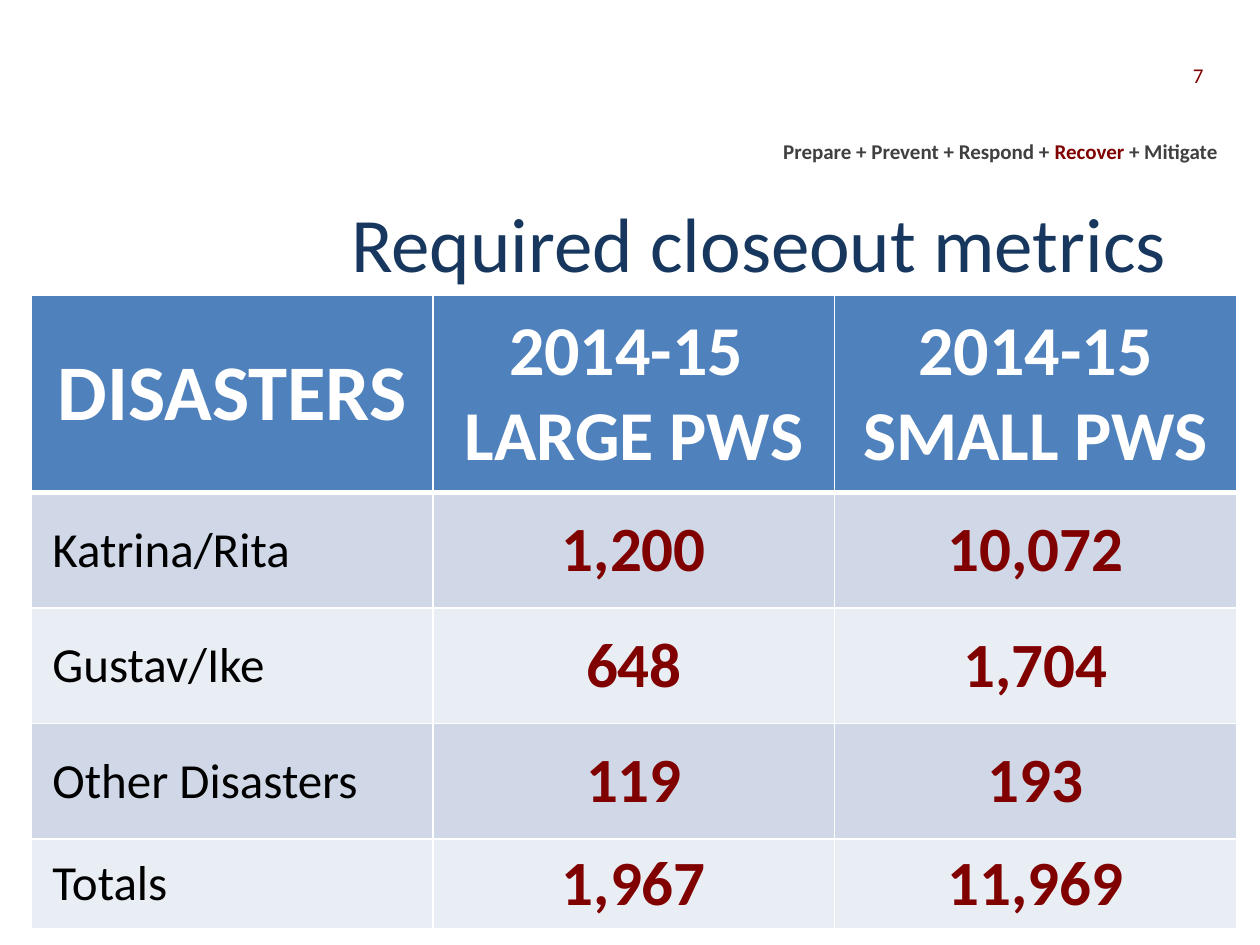
from dataclasses import dataclass

from lxml import etree
from pptx import Presentation
from pptx.dml.color import RGBColor
from pptx.enum import text
from pptx.oxml import ns
from pptx.util import Pt


@dataclass(frozen=True)
class Theme:
    """Colours and type sizes of the slide."""
    font: str = "Calibri"
    navy: str = "17375E"
    maroon: str = "800000"
    grey: str = "404040"
    black: str = "000000"
    white: str = "FFFFFF"
    header: str = "4F81BD"
    bands: tuple = ("D0D8E8", "E9EDF4")
    small: int = 12
    title: int = 44
    corner: int = 45
    heading: int = 40
    label: int = 28
    value: int = 36


T = Theme()
LEFT, CENTER, RIGHT = (text.PP_ALIGN.LEFT, text.PP_ALIGN.CENTER,
                       text.PP_ALIGN.RIGHT)
HEADINGS = ["DISASTERS", "2014-15 \nLARGE PWS", "2014-15\nSMALL PWS"]
RESULTS = [
    ["Katrina/Rita", "1,200", "10,072"],
    ["Gustav/Ike", "648", "1,704"],
    ["Other Disasters", "119", "193"],
    ["Totals", "1,967", "11,969"],
]
ROW_HEIGHTS = [113, 66, 66, 66, 51]


def add_text(p, content, *, size, color, bold=False, align=LEFT):
    """Append formatted text to a paragraph, breaking lines at newlines."""
    p.alignment = align
    for i, line in enumerate(content.split("\n")):
        if i:
            p.add_line_break()
        r = p.add_run()
        r.text = line
        r.font.name = T.font
        r.font.size = Pt(size)
        r.font.bold = bold
        r.font.color.rgb = RGBColor.from_string(color)


def add_box(s, x, y, w, h, anchor=text.MSO_ANCHOR.MIDDLE):
    """Add a wrapping text box and return its first paragraph."""
    tf = s.shapes.add_textbox(Pt(x), Pt(y), Pt(w), Pt(h)).text_frame
    tf.word_wrap = True
    tf.vertical_anchor = anchor
    return tf.paragraphs[0]


def set_borders(cell, widths):
    """Draw white cell borders from a side-to-width mapping."""
    tc_pr = cell._tc.get_or_add_tcPr()
    for i, (side, width) in enumerate(widths.items()):
        ln = etree.Element(ns.qn(f"a:ln{side}"), w=str(Pt(width)))
        fill = etree.SubElement(ln, ns.qn("a:solidFill"))
        etree.SubElement(fill, ns.qn("a:srgbClr"), val=T.white)
        tc_pr.insert(i, ln)


def fill_cell(cell, content, fill, top=1, bottom=1, **fmt):
    """Write and style one table cell."""
    cell.margin_left = cell.margin_right = Pt(12)
    cell.margin_top = cell.margin_bottom = Pt(3.6)
    cell.vertical_anchor = text.MSO_ANCHOR.MIDDLE
    cell.fill.solid()
    cell.fill.fore_color.rgb = RGBColor.from_string(fill)
    set_borders(cell, {"L": 1, "R": 1, "T": top, "B": bottom})
    add_text(cell.text_frame.paragraphs[0], content, **fmt)


def add_metrics(s):
    """Add the table of closeout metrics."""
    table = s.shapes.add_table(len(ROW_HEIGHTS), len(HEADINGS), Pt(18),
                               Pt(168.5), Pt(688.5),
                               Pt(sum(ROW_HEIGHTS))).table
    table.first_row = table.horz_banding = False
    for col in table.columns:
        col.width = Pt(229.5)
    for row, height in zip(table.rows, ROW_HEIGHTS):
        row.height = Pt(height)
    for c, heading in enumerate(HEADINGS):
        fill_cell(table.cell(0, c), heading, T.header, bottom=3,
                  size=T.heading if c else T.corner, color=T.white,
                  bold=True, align=CENTER)
    label = dict(size=T.label, color=T.black)
    value = dict(size=T.value, color=T.maroon, bold=True, align=CENTER)
    for r, result in enumerate(RESULTS):
        for c, content in enumerate(result):
            fill_cell(table.cell(r + 1, c), content, T.bands[r % 2],
                      top=1 if r else 3, **(value if c else label))


def main():
    """Build the closeout metrics slide."""
    prs = Presentation()
    prs.slide_width, prs.slide_height = Pt(720), Pt(540)
    s = prs.slides.add_slide(prs.slide_layouts[6])
    p = add_box(s, 314, 75.6, 388.8, 21.6, text.MSO_ANCHOR.TOP)
    for content, color in [("Prepare + Prevent + Respond + ", T.grey),
                           ("Recover ", T.maroon), ("+ Mitigate", T.grey)]:
        add_text(p, content, size=T.small, color=color, bold=True,
                 align=RIGHT)
    add_text(add_box(s, 36, 102.2, 648, 71.3), "Required closeout metrics ",
             size=T.title, color=T.navy, align=RIGHT)
    add_metrics(s)
    add_text(add_box(s, 406, 15.1, 288.8, 55.4), "7", size=T.small,
             color=T.maroon, align=RIGHT)
    prs.save("out.pptx")


if __name__ == "__main__":
    main()
